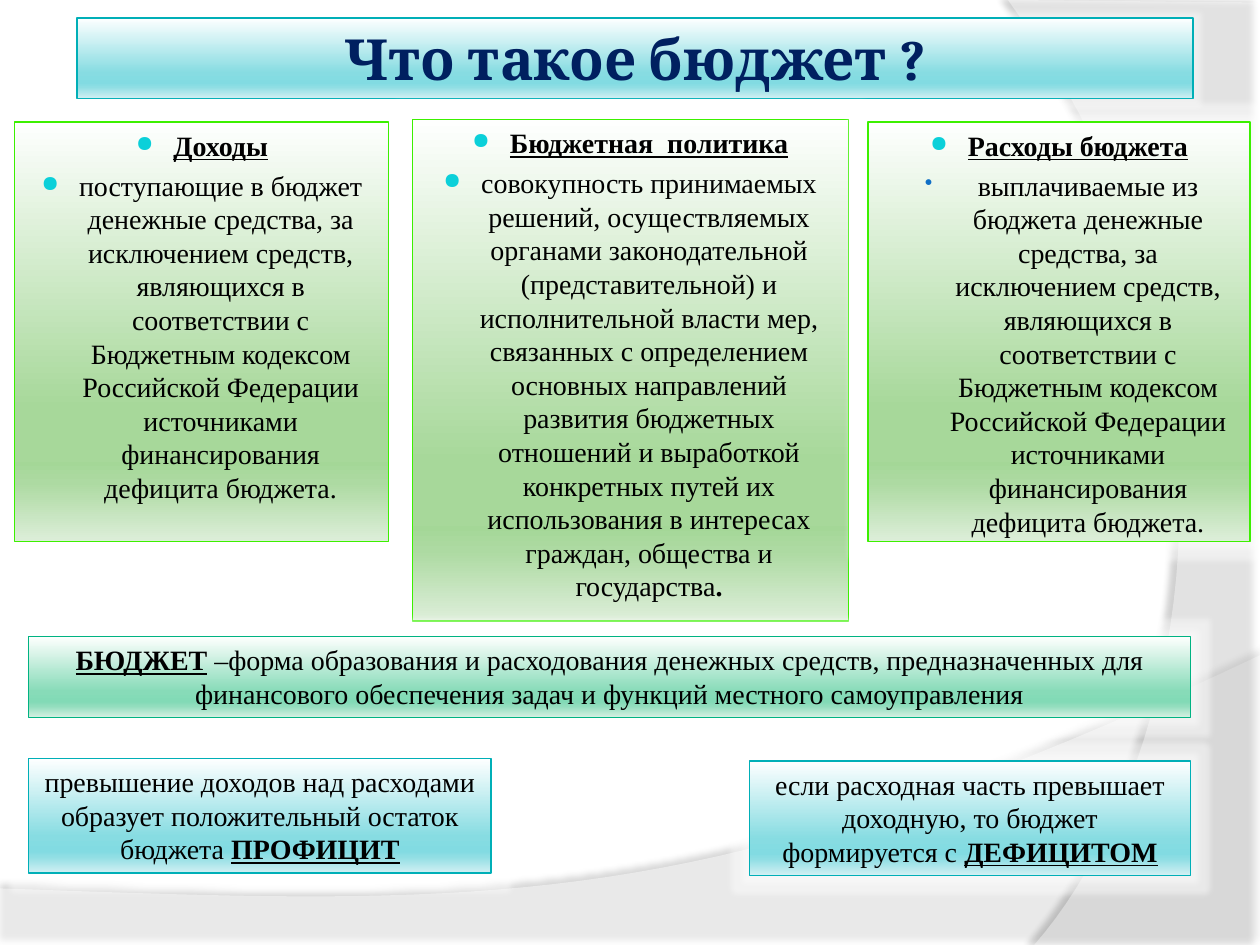
from dataclasses import dataclass

from lxml import etree
from pptx import Presentation
from pptx import util as u
from pptx.dml.color import RGBColor
from pptx.enum import shapes, text
from pptx.oxml.ns import qn


@dataclass(frozen=True)
class Theme:
    """Colours, fonts and type sizes of the deck."""

    heading_font: str = "Cambria"
    body_font: str = "Times New Roman"
    heading_size: float = 32.4
    body_size: float = 16
    paragraph_gap: float = 3.7
    line_width: float = 0.75
    navy: str = "002060"
    black: str = "000000"
    white: str = "FFFFFF"
    aqua: str = "0BD0D9"
    blue: str = "0F6FC6"
    positions: tuple = (0, 68, 81, 86, 100)
    green: tuple = ("3CF000", "FEFFFE", "A7D89A", "A4D797", "ADDAA2", "DDEED9")
    mint: tuple = ("00B382", "FEFFFE", "87DBB8", "82DAB6", "91DDBD", "D4F0E2")
    teal: tuple = ("00AFB7", "FEFFFF", "87DCE2", "82DBE2", "90DEE4", "D3F0F3")


def add(parent, tag, **attributes):
    """Append a drawing element and return it."""
    values = {name: str(value) for name, value in attributes.items()}
    return etree.SubElement(parent, qn(f"a:{tag}"), values)


def bezier(start, first, second, end, steps=40):
    """Return points along a cubic curve, without its start."""
    points = []
    for step in range(1, steps + 1):
        t = step / steps
        weights = ((1 - t) ** 3, 3 * t * (1 - t) ** 2, 3 * t * t * (1 - t), t**3)
        corners = (start, first, second, end)
        points.append(tuple(sum(w * c[axis] for w, c in zip(weights, corners)) for axis in (0, 1)))
    return points


class Builder:
    """Holds the theme and the current page."""

    def __init__(self, page, theme):
        """Keep the page and the theme."""
        self.page, self.theme = page, theme

    def swoosh(self, corners, curve, opacity, shade, distance, direction):
        """Draw a translucent curved panel with a soft shadow."""
        points = [(u.Cm(x), u.Cm(y)) for x, y in corners + bezier(corners[-1], *curve)]
        outline = self.page.shapes.build_freeform(*points[0], scale=1.0)
        outline.add_line_segments(points[1:], close=True)
        panel = outline.convert_to_shape()
        panel.fill.solid()
        panel.fill.fore_color.rgb = RGBColor.from_string(self.theme.white)
        colour = panel._element.spPr.find(qn("a:solidFill")).find(qn("a:srgbClr"))
        add(colour, "alpha", val=opacity * 1000)
        panel.line.fill.background()
        panel.shadow.inherit = False
        shadow = add(panel._element.spPr.find(qn("a:effectLst")), "outerShdw", blurRad=u.Pt(4),
                     dist=u.Pt(distance), dir=direction * 60000, algn="ctr", rotWithShape=0)
        add(add(shadow, "srgbClr", val=self.theme.black), "alpha", val=shade * 1000)

    def decorate(self, box, palette):
        """Apply a vertical gradient, a thin border and a pale glow."""
        border, *colours = palette
        box.fill.gradient()
        box.fill.gradient_angle = 270
        stops = box._element.spPr.find(qn("a:gradFill")).find(qn("a:gsLst"))
        for stop in list(stops):
            stops.remove(stop)
        for position, colour in zip(self.theme.positions, colours):
            add(add(stops, "gs", pos=position * 1000), "srgbClr", val=colour)
        box.line.color.rgb = RGBColor.from_string(border)
        box.line.width = u.Pt(self.theme.line_width)
        box.shadow.inherit = False
        glow = add(box._element.spPr.find(qn("a:effectLst")), "glow", rad=u.Pt(7))
        add(add(glow, "srgbClr", val=self.theme.white), "alpha", val=45000)

    def span(self, para, words, font, size, colour, bold=False, underline=False):
        """Add one formatted run."""
        span = para.add_run()
        span.text = words
        span.font.name, span.font.size = font, u.Pt(size)
        span.font.bold, span.font.underline = bold, underline
        span.font.color.rgb = RGBColor.from_string(colour)

    def body(self, para, spans):
        """Add centred body runs given as words, bold and underline."""
        para.alignment = text.PP_ALIGN.CENTER
        for words, *emphasis in spans:
            self.span(para, words, self.theme.body_font, self.theme.body_size,
                      self.theme.black, *emphasis)

    def title(self, area, words):
        """Place and format the title above the backdrop."""
        title = self.page.shapes.title
        self.page.shapes._spTree.append(title._element)
        title.left, title.top, title.width, title.height = map(u.Cm, area)
        self.decorate(title, self.theme.teal)
        frame = title.text_frame
        frame.auto_size = text.MSO_AUTO_SIZE.NONE
        frame.vertical_anchor = text.MSO_ANCHOR.MIDDLE
        frame.margin_left = frame.margin_right = u.Cm(0.13)
        frame.margin_top = frame.margin_bottom = u.Cm(0.13)
        para = frame.paragraphs[0]
        para.alignment = text.PP_ALIGN.CENTER
        self.span(para, words, self.theme.heading_font, self.theme.heading_size,
                  self.theme.navy, True)

    def panel(self, area, palette):
        """Draw a gradient rectangle and return its text frame."""
        box = self.page.shapes.add_shape(shapes.MSO_SHAPE.RECTANGLE, *map(u.Cm, area))
        self.decorate(box, palette)
        box.text_frame.word_wrap = True
        box.text_frame.vertical_anchor = text.MSO_ANCHOR.TOP
        return box.text_frame

    def note(self, area, palette, spans):
        """Draw a panel holding one plain paragraph."""
        frame = self.panel(area, palette)
        frame.auto_size = text.MSO_AUTO_SIZE.SHAPE_TO_FIT_TEXT
        self.body(frame.paragraphs[0], spans)

    def bullet(self, para, mark, colour, margin, indent):
        """Give a paragraph a hanging bullet."""
        properties = para._p.get_or_add_pPr()
        properties.set("marL", str(u.Cm(margin)))
        properties.set("indent", str(u.Cm(indent)))
        add(add(properties, "buClr"), "srgbClr", val=colour)
        add(properties, "buSzPct", val=80000)
        add(properties, "buChar", char=mark)

    def column(self, area, heading, spans, second=None):
        """Draw a green panel with a bulleted heading and definition."""
        frame = self.panel(area, self.theme.green)
        standard = ("●", self.theme.aqua, 0.76, -0.76)
        self.bullet(frame.paragraphs[0], *standard)
        self.body(frame.paragraphs[0], [(heading, True, True)])
        para = frame.add_paragraph()
        self.bullet(para, *(second or standard))
        para.space_before = u.Pt(self.theme.paragraph_gap)
        self.body(para, spans)


def main():
    """Build the budget slide."""
    deck = Presentation()
    deck.slide_width, deck.slide_height = u.Cm(25.4), u.Cm(19.05)
    theme = Theme()
    builder = Builder(deck.slides.add_slide(deck.slide_layouts[5]), theme)

    builder.swoosh([(0, 17.91), (0, 19.05), (25.4, 19.05), (25.4, 13.21)],
                   [(14.2, 18.52), (9.93, 18.26), (0, 17.91)], 45, 35, 3.5, 270)
    builder.swoosh([(25.4, 0.05), (25.4, 19.05), (20.85, 19.05)],
                   [(23.75, 15.72), (25.86, 7.62), (20.32, 0)], 40, 45, 4, 180)
    builder.title((1.55, 0.36, 22.5, 1.63), "Что такое бюджет ?")

    funds = ("денежные средства, за исключением средств, являющихся в соответствии с "
             "Бюджетным кодексом Российской Федерации источниками финансирования "
             "дефицита бюджета.")
    policy = ("совокупность принимаемых решений, осуществляемых органами законодательной "
              "(представительной) и исполнительной власти мер, связанных с определением "
              "основных направлений развития бюджетных отношений и выработкой конкретных "
              "путей их использования в интересах граждан, общества и государства")
    builder.column((0.3, 2.46, 7.54, 8.46), "Доходы", [(f"поступающие в бюджет {funds}",)])
    builder.column((8.31, 2.41, 8.79, 10.11), "Бюджетная  политика", [(policy,), (".", True)])
    builder.column((17.5, 2.46, 7.7, 8.46), "Расходы бюджета",
                   [(f"выплачиваемые из бюджета {funds}",)], ("•", theme.blue, 1.17, -1.07))

    builder.note((0.58, 12.83, 23.42, 1.63), theme.mint, [
        ("БЮДЖЕТ", True, True),
        (" –форма образования и расходования денежных средств, предназначенных для "
         "финансового обеспечения задач и функций местного самоуправления",)])
    builder.note((0.58, 15.29, 9.32, 2.31), theme.teal, [
        ("превышение доходов над расходами образует положительный остаток бюджета ",),
        ("ПРОФИЦИТ", True, True)])
    builder.note((15.11, 15.34, 8.89, 2.31), theme.teal, [
        ("если расходная часть превышает доходную, то бюджет формируется с ",),
        ("ДЕФИЦИТОМ", True, True)])
    deck.save("out.pptx")


if __name__ == "__main__":
    main()
